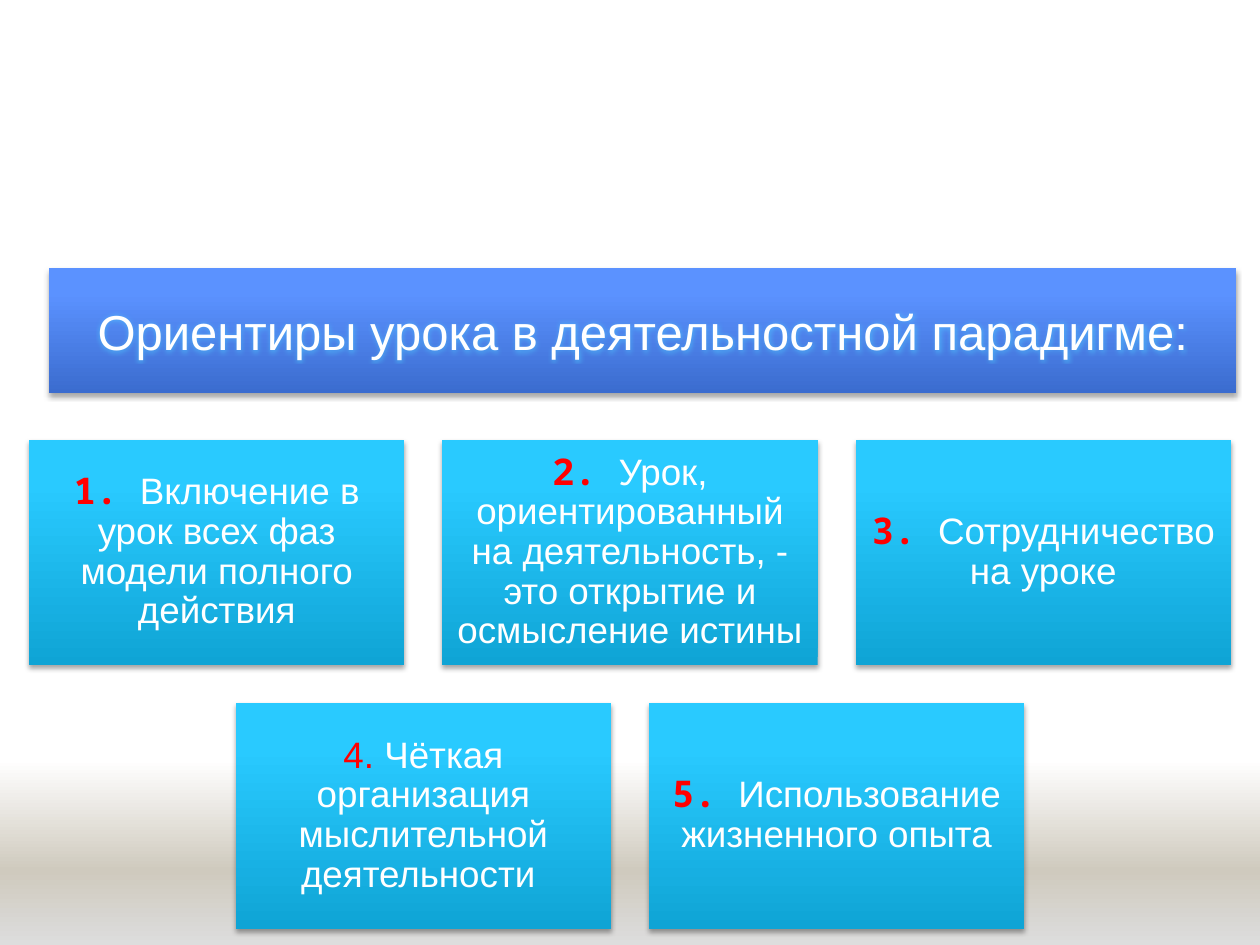
import pptx
import pptx.dml.color
import pptx.enum.shapes
import pptx.enum.text
import pptx.oxml
import pptx.oxml.ns
import pptx.util

WIDTH, HEIGHT = 10, 7.5
CARD_W, CARD_H = 2.98, 1.79
GAP, CARDS_TOP = 0.3, 3.49

COLORS = {"white": "FFFFFF", "number": "FF0000", "glow": "4FC8FF", "shadow": "000000"}
# Gradients: (position in percent, colour), and the angle in degrees
BAND = ([(0, "FFFFFF"), (60, "CFCABE"), (100, "DDDDDD")], 90)
HEADING = ([(0, "3B6CCF"), (80, "5B92FF"), (100, "5D93FF")], 270)
CARD = ([(0, "0FA4D5"), (80, "29CAFF"), (100, "2BCAFF")], 270)

SANS, MONO = "Arial", "Noto Sans Mono"
ROWS = [
    [
        ("1. ", "Включение в урок всех фаз модели полного действия", MONO),
        ("2. ", "Урок, ориентированный на деятельность, - это открытие и осмысление истины ", MONO),
        ("3. ", "Сотрудничество на уроке", MONO),
    ],
    [
        ("4. ", "Чёткая организация мыслительной деятельности ", SANS),
        ("5. ", "Использование жизненного опыта", MONO),
    ],
]


def xml(markup):
    tag, rest = markup.split(" ", 1) if " " in markup.split(">", 1)[0] else markup.split(">", 1)
    joint = " " if " " in markup.split(">", 1)[0] else ">"
    return pptx.oxml.parse_xml(f"{tag} {pptx.oxml.ns.nsdecls('a')}{joint}{rest}")


def add_text(paragraph, text, size=21, color="white", font=SANS, bold=False, glow=None):
    run = paragraph.add_run()
    run.text = text
    run.font.size = pptx.util.Pt(size)
    run.font.bold = bold
    run.font.color.rgb = pptx.dml.color.RGBColor.from_string(COLORS[color])
    if glow:
        run.font._element.append(xml(
            f'<a:effectLst><a:glow rad="{pptx.util.Pt(5)}"><a:srgbClr val="{COLORS[glow]}">'
            '<a:alpha val="55000"/></a:srgbClr></a:glow></a:effectLst>'))
    run.font.name = font


class Deck:
    def __init__(self):
        self.presentation = pptx.Presentation()
        self.presentation.slide_width = pptx.util.Inches(WIDTH)
        self.presentation.slide_height = pptx.util.Inches(HEIGHT)
        self.slide = self.presentation.slides.add_slide(self.presentation.slide_layouts[6])

    def panel(self, left, top, width, height, gradient, shadow=True):
        panel = self.slide.shapes.add_shape(
            pptx.enum.shapes.MSO_SHAPE.RECTANGLE,
            *(pptx.util.Inches(length) for length in (left, top, width, height)))
        panel.line.fill.background()
        panel.shadow.inherit = False
        properties = panel._element.spPr
        stops, angle = gradient
        marks = "".join(f'<a:gs pos="{pos * 1000}"><a:srgbClr val="{color}"/></a:gs>'
                        for pos, color in stops)
        properties.insert(2, xml(
            f'<a:gradFill rotWithShape="1"><a:gsLst>{marks}</a:gsLst>'
            f'<a:lin ang="{angle * 60000}" scaled="0"/></a:gradFill>'))
        if shadow:
            properties.find(pptx.oxml.ns.qn("a:effectLst")).append(xml(
                f'<a:outerShdw blurRad="{pptx.util.Pt(3.1)}" dist="{pptx.util.Pt(1.8)}" '
                f'dir="5400000" rotWithShape="0"><a:srgbClr val="{COLORS["shadow"]}">'
                '<a:alpha val="35000"/></a:srgbClr></a:outerShdw>'))
        return panel

    def centred_paragraph(self, panel):
        frame = panel.text_frame
        frame.word_wrap = True
        frame.vertical_anchor = pptx.enum.text.MSO_ANCHOR.MIDDLE
        paragraph = frame.paragraphs[0]
        paragraph.alignment = pptx.enum.text.PP_ALIGN.CENTER
        return paragraph

    def heading(self, text):
        panel = self.panel(0.39, 2.13, 9.42, 0.99, HEADING)
        add_text(self.centred_paragraph(panel), text, size=28, glow="glow")

    def card(self, left, top, number, text, number_font):
        panel = self.panel(left, top, CARD_W, CARD_H, CARD)
        frame = panel.text_frame
        frame.margin_left = frame.margin_right = pptx.util.Inches(0.09)
        frame.margin_top = frame.margin_bottom = pptx.util.Inches(0.09)
        paragraph = self.centred_paragraph(panel)
        paragraph.line_spacing = 0.9
        add_text(paragraph, number, color="number", font=number_font, bold=number_font == MONO)
        add_text(paragraph, text)

    def card_row(self, row, cards):
        # Each row is centred on the slide
        left = (WIDTH - len(cards) * CARD_W - (len(cards) - 1) * GAP) / 2
        for column, card in enumerate(cards):
            self.card(left + column * (CARD_W + GAP), CARDS_TOP + row * (CARD_H + GAP), *card)


def main():
    deck = Deck()
    # Shaded band along the bottom
    deck.panel(0, 6.03, WIDTH, HEIGHT - 6.03, BAND, shadow=False)
    # Heading and numbered cards
    deck.heading("Ориентиры урока в деятельностной парадигме:")
    for row, cards in enumerate(ROWS):
        deck.card_row(row, cards)
    deck.presentation.save("out.pptx")


if __name__ == "__main__":
    main()
